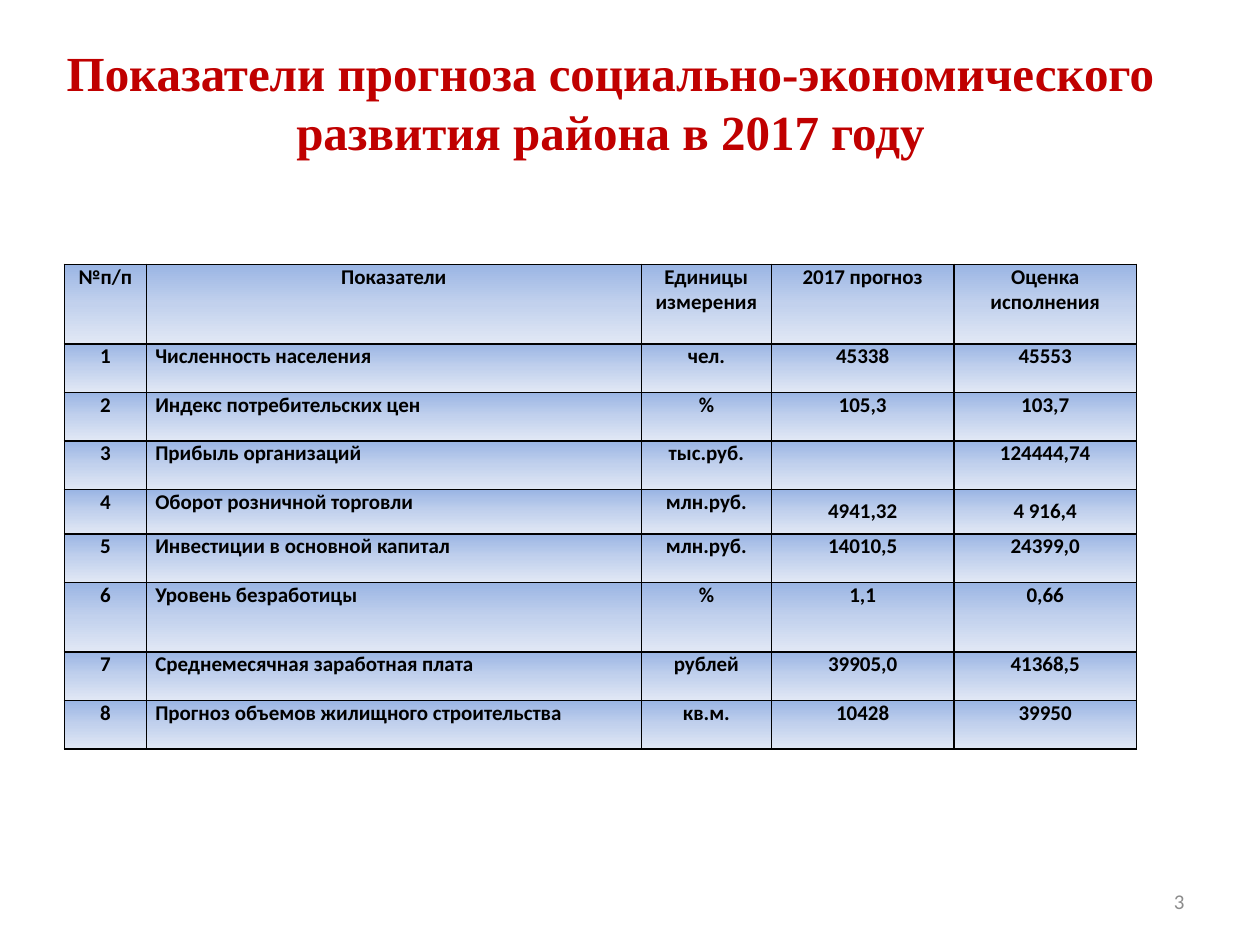
from lxml import etree
from pptx import Presentation
from pptx.dml.color import RGBColor
from pptx.enum import text
from pptx.oxml import ns
from pptx.util import Cm, Pt

# Content
TITLE = "Показатели прогноза социально-экономического развития района в 2017 году"
PAGE_NUMBER = "3"
HEADINGS = ("№п/п", "Показатели", "Единицы измерения", "2017 прогноз", "Оценка исполнения")
INDICATORS = [
    ("Численность населения", "чел.", "45338", "45553"),
    ("Индекс потребительских цен", "%", "105,3", "103,7"),
    ("Прибыль организаций ", "тыс.руб.", "", "124444,74"),
    ("Оборот розничной торговли", "млн.руб.", "4941,32", "4 916,4"),
    ("Инвестиции в основной капитал", "млн.руб.", "14010,5", "24399,0"),
    ("Уровень безработицы", "%", "1,1", "0,66"),
    ("Среднемесячная заработная плата", "рублей", "39905,0", "41368,5"),
    ("Прогноз объемов жилищного строительства", "кв.м.", "10428", "39950"),
]
MIDDLE_CELLS = {(4, 3), (4, 4)}

# Format
COLORS = {"title": "C00000", "text": "000000", "page": "8C8C8C", "border": "000000"}
GRADIENT = ((0, "9AB5E4"), (50, "C2D1ED"), (100, "E1E8F5"))
COLUMN_WIDTHS = (1.65, 9.98, 2.62, 3.68, 3.68)
HEADING_HEIGHT, ROW_HEIGHT = 1.6, 0.98
SPECIAL_HEIGHTS = {4: 0.89, 6: 1.4}
ALIGN, ANCHOR = text.PP_ALIGN, text.MSO_ANCHOR


def write(frame, words, size=12, font="Calibri", color="text", bold=False, align=ALIGN.CENTER):
    frame.word_wrap = True
    paragraph = frame.paragraphs[0]
    paragraph.alignment = align
    run = paragraph.add_run()
    run.text = words
    run.font.size, run.font.name, run.font.bold = Pt(size), font, bold
    run.font.color.rgb = RGBColor.from_string(COLORS[color])


def add_box(slide, left, top, width, height, anchor, words, **style):
    box = slide.shapes.add_textbox(Cm(left), Cm(top), Cm(width), Cm(height))
    box.text_frame.vertical_anchor = anchor
    write(box.text_frame, words, **style)


def add_element(parent, tag, **attributes):
    return etree.SubElement(parent, ns.qn(tag), {k: str(v) for k, v in attributes.items()})


def paint(cell):
    """Give the cell thin borders and a vertical gradient."""
    properties = cell._tc.get_or_add_tcPr()
    for side in "LRTB":
        line = add_element(properties, f"a:ln{side}", w=Pt(1))
        add_element(add_element(line, "a:solidFill"), "a:srgbClr", val=COLORS["border"])
    fill = add_element(properties, "a:gradFill", rotWithShape=1)
    stops = add_element(fill, "a:gsLst")
    for percent, color in GRADIENT:
        add_element(add_element(stops, "a:gs", pos=percent * 1000), "a:srgbClr", val=color)
    add_element(fill, "a:lin", ang=90 * 60000, scaled=0)


def add_indicators(slide):
    rows = [HEADINGS] + [(str(n), *row) for n, row in enumerate(INDICATORS, 1)]
    heights = [HEADING_HEIGHT] + [SPECIAL_HEIGHTS.get(n, ROW_HEIGHT) for n in range(1, len(rows))]
    table = slide.shapes.add_table(
        len(rows), len(HEADINGS), Cm(1.3), Cm(5.33),
        Cm(sum(COLUMN_WIDTHS)), Cm(sum(heights))).table
    table.first_row = table.horz_banding = False
    for column, width in zip(table.columns, COLUMN_WIDTHS):
        column.width = Cm(width)
    for r, (row, height) in enumerate(zip(rows, heights)):
        table.rows[r].height = Cm(height)
        for c, words in enumerate(row):
            cell = table.cell(r, c)
            cell.margin_left = cell.margin_right = Cm(0.18)
            cell.margin_top = cell.margin_bottom = 0
            cell.vertical_anchor = ANCHOR.MIDDLE if (r, c) in MIDDLE_CELLS else ANCHOR.TOP
            paint(cell)
            if words:
                align = ALIGN.JUSTIFY if r and c == 1 else ALIGN.CENTER
                write(cell.text_frame, words, bold=True, align=align)


def main():
    deck = Presentation()
    deck.slide_width, deck.slide_height = Cm(25.4), Cm(19.05)
    slide = deck.slides.add_slide(deck.slide_layouts[6])

    # Page number, table, title
    add_box(slide, 18.2, 17.66, 5.93, 1.01, ANCHOR.MIDDLE, PAGE_NUMBER,
            color="page", align=ALIGN.RIGHT)
    add_indicators(slide)
    add_box(slide, 0, 0.74, 24.61, 2.64, ANCHOR.TOP, TITLE,
            size=28, font="Times New Roman", color="title", bold=True)
    deck.save("out.pptx")


if __name__ == "__main__":
    main()
